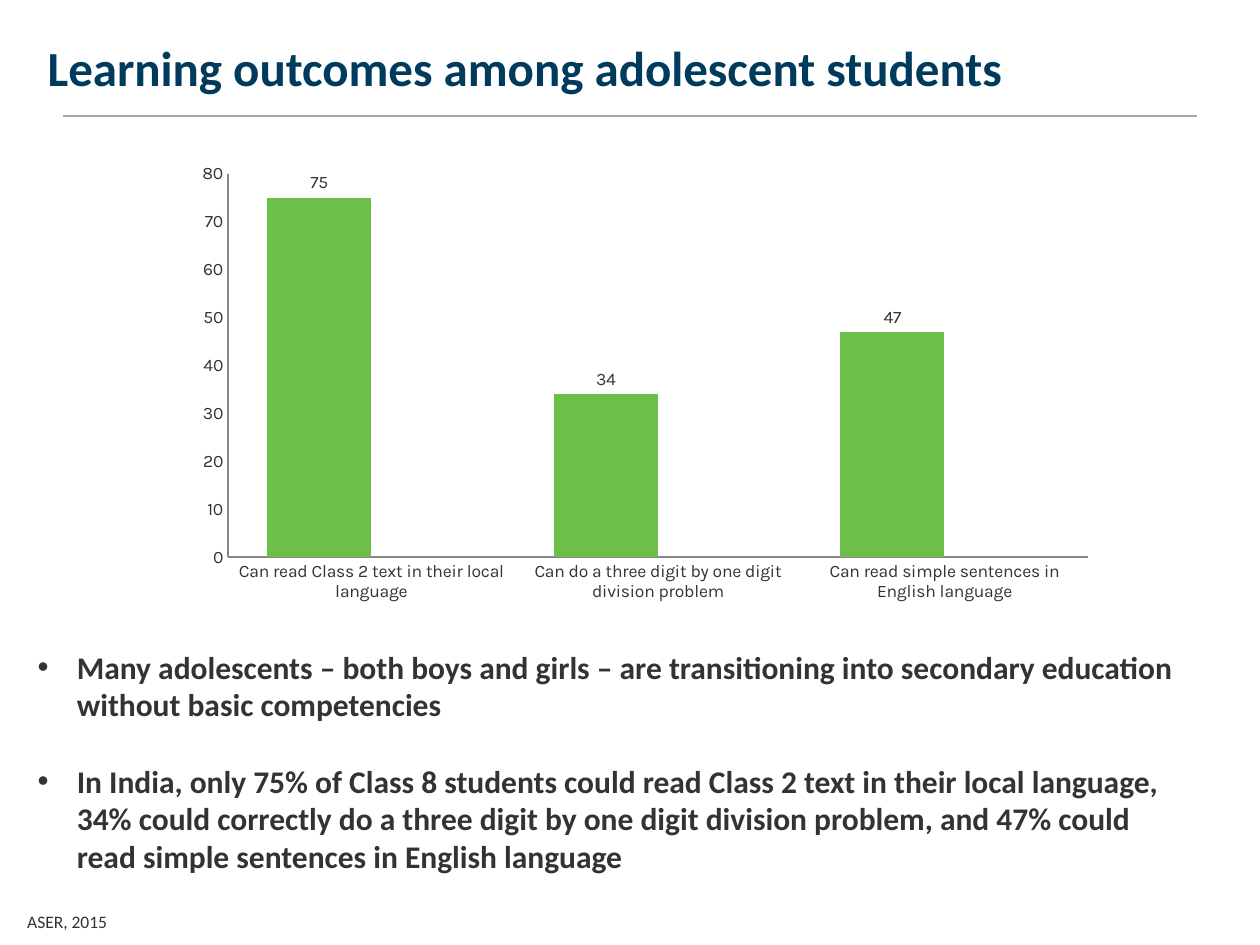
from lxml.etree import SubElement
from pptx import Presentation
from pptx.chart.data import CategoryChartData
from pptx.dml.color import RGBColor
from pptx.enum.chart import XL_CHART_TYPE, XL_LABEL_POSITION, XL_TICK_MARK
from pptx.enum.shapes import MSO_CONNECTOR
from pptx.enum.text import MSO_ANCHOR
from pptx.oxml.ns import qn
from pptx.util import Cm, Pt

INK, NAVY, GREEN, RULE, AXIS = "333333", "003A5D", "6CC04A", "A6A6A6", "868686"


def colour(value):
    """Turn a hex string into a colour."""
    return RGBColor.from_string(value)


class SlideBuilder:
    """Hold the style and the current slide, and draw each kind of element."""

    text_font = "Calibri"
    chart_font = "Karla"

    def __init__(self, page):
        self.page = page

    def style(self, font, name, size, tint, bold=False):
        """Apply a face, size, colour and weight to a font."""
        font.name, font.size, font.bold = name, Pt(size), bold
        font.color.rgb = colour(tint)

    def rule(self, left, right, top):
        """Draw a thin horizontal line."""
        line = self.page.shapes.add_connector(
            MSO_CONNECTOR.STRAIGHT, Cm(left), Cm(top), Cm(right), Cm(top))
        line.line.color.rgb = colour(RULE)
        line.line.width = Pt(1)
        SubElement(line._element.spPr, qn("a:effectLst"))

    def text(self, place, lines, size, tint=INK, bold=False, bullets=False,
             anchor=MSO_ANCHOR.TOP, gap=0):
        """Add a text box with one paragraph for each line."""
        box = self.page.shapes.add_textbox(*map(Cm, place))
        frame = box.text_frame
        frame.word_wrap = True
        frame.vertical_anchor = anchor
        for index, line in enumerate(lines):
            para = frame.add_paragraph() if index else frame.paragraphs[0]
            para.text = line
            para.space_before = Pt(gap if index else 0)
            self.style(para.font, self.text_font, size, tint, bold)
            if bullets:
                self.bullet(para)

    def bullet(self, para):
        """Give a paragraph a hanging round bullet."""
        properties = para._p.get_or_add_pPr()
        properties.set("marL", str(Cm(0.79)))
        properties.set("indent", str(Cm(-0.79)))
        face = SubElement(properties, qn("a:buFont"))
        face.set("typeface", "Arial")
        mark = SubElement(properties, qn("a:buChar"))
        mark.set("char", "•")
        properties.append(properties.find(qn("a:defRPr")))

    def columns(self, place, categories, series):
        """Add a clustered column chart from (name, values, colour) rows."""
        data = CategoryChartData()
        data.categories = categories
        for name, values, _ in series:
            data.add_series(name, values)
        chart = self.page.shapes.add_chart(
            XL_CHART_TYPE.COLUMN_CLUSTERED, *map(Cm, place), data).chart
        chart.has_legend = chart.has_title = False
        self.style(chart.font, self.chart_font, 10, INK)
        for axis in (chart.category_axis, chart.value_axis):
            axis.has_major_gridlines = False
            axis.major_tick_mark = axis.minor_tick_mark = XL_TICK_MARK.NONE
            axis.format.line.color.rgb = colour(AXIS)
        chart.value_axis.minimum_scale = 0
        chart.value_axis.maximum_scale = 80
        chart.value_axis.major_unit = 10
        plot = chart.plots[0]
        plot.gap_width, plot.overlap = 75, 0
        plot.vary_by_categories = False
        for bars, (_, _, tint) in zip(plot.series, series):
            bars.format.fill.solid()
            bars.format.fill.fore_color.rgb = colour(tint)
            bars.data_labels.show_value = True
            bars.data_labels.position = XL_LABEL_POSITION.OUTSIDE_END


def main():
    """Build the slide and save it."""
    deck = Presentation()
    deck.slide_width, deck.slide_height = Cm(25.4), Cm(19.05)
    slide = SlideBuilder(deck.slides.add_slide(deck.slide_layouts[6]))

    slide.rule(1.27, 24.13, 2.34)
    slide.text((0.71, 0.53, 23.42, 1.63), ["Learning outcomes among adolescent students"],
               28, NAVY, bold=True, anchor=MSO_ANCHOR.MIDDLE)
    slide.text((0.51, 12.93, 23.8, 4.88), [
        "Many adolescents – both boys and girls – are transitioning into secondary "
        "education without basic competencies",
        "In India, only 75% of Class 8 students could read Class 2 text in their local "
        "language, 34% could correctly do a three digit by one digit division problem, "
        "and 47% could read simple sentences in English language",
    ], 18, bold=True, bullets=True, gap=22)
    slide.columns((3.71, 3.12, 18.59, 9.19), [
        "Can read Class 2 text in their local language",
        "Can do a three digit by one digit division problem",
        "Can read simple sentences in English language",
    ], [
        ("Series 1", (75, 34, 47), GREEN),
        ("Series 2", (None, None, None), "033C5A"),
    ])
    slide.text((0.3, 18.24, 9.4, 0.69), ["ASER, 2015"], 10)

    deck.save("out.pptx")


if __name__ == "__main__":
    main()
